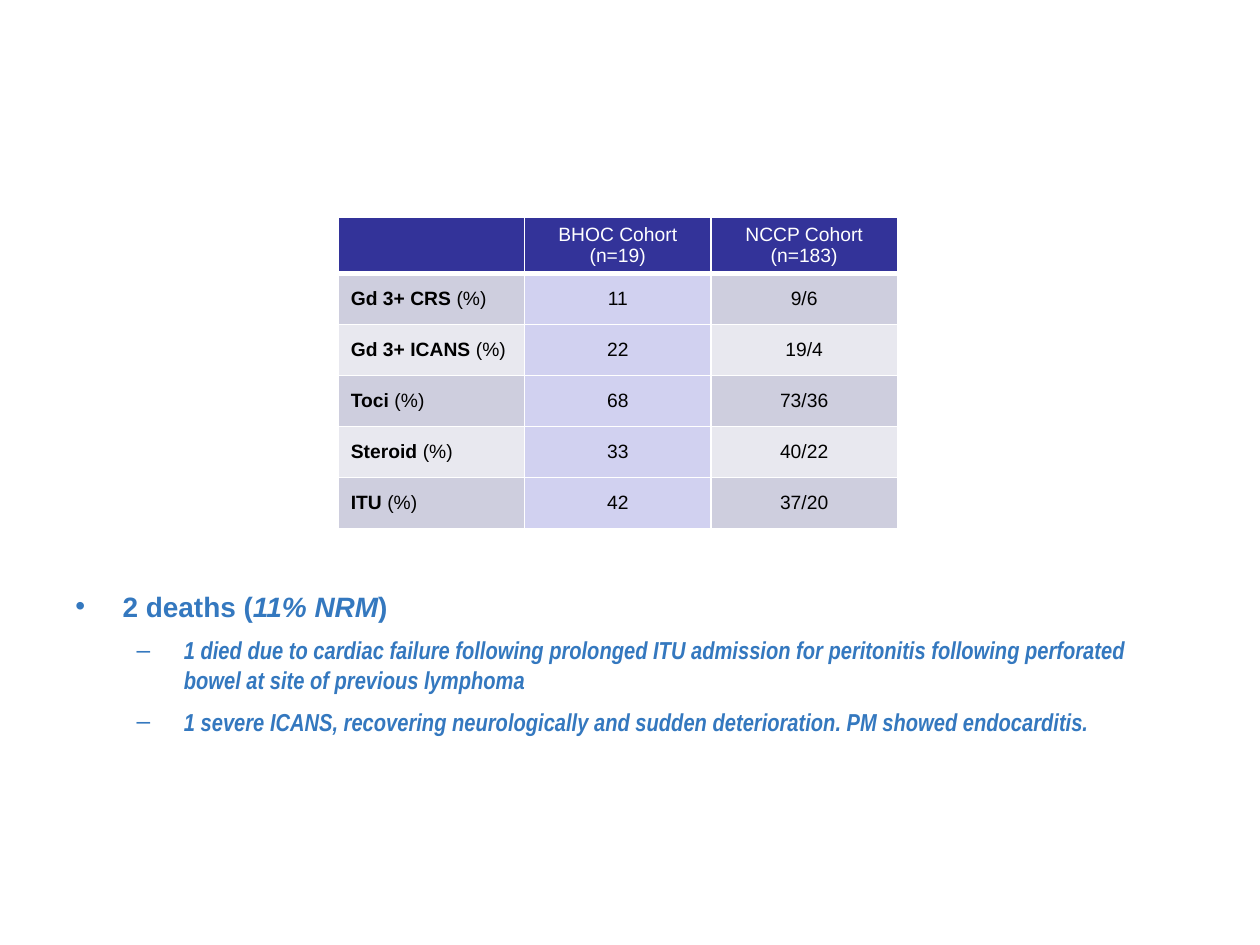
import lxml.etree
import pptx
import pptx.dml.color
import pptx.enum.text
import pptx.oxml.ns
import pptx.util

Pt = pptx.util.Pt
RGBColor = pptx.dml.color.RGBColor
qn = pptx.oxml.ns.qn
ALIGN = pptx.enum.text.PP_ALIGN

WHITE = RGBColor(0xFF, 0xFF, 0xFF)
BLACK = RGBColor(0x00, 0x00, 0x00)
NAVY = RGBColor(0x33, 0x33, 0x99)
DARK_BAND = RGBColor(0xCE, 0xCE, 0xDE)
LIGHT_BAND = RGBColor(0xE8, 0xE8, 0xEF)
LILAC = RGBColor(0xD1, 0xD1, 0xF0)
BLUE = RGBColor(0x34, 0x78, 0xBF)

HEADINGS = ["", "BHOC Cohort (n=19)", "NCCP Cohort (n=183)"]
OUTCOMES = [
    ("Gd 3+ CRS", "11", "9/6"),
    ("Gd 3+ ICANS", "22", "19/4"),
    ("Toci", "68", "73/36"),
    ("Steroid", "33", "40/22"),
    ("ITU", "42", "37/20"),
]
DEATHS = [
    "1 died due to cardiac failure following prolonged ITU admission for peritonitis "
    "following perforated bowel at site of previous lymphoma",
    "1 severe ICANS, recovering neurologically and sudden deterioration. "
    "PM showed endocarditis.",
]


def add_text(para, text, size=11, font="Arial", color=BLACK, bold=False, italic=False):
    """Append one formatted span to a paragraph."""
    span = para.add_run()
    span.text = text
    span.font.size = Pt(size)
    span.font.name = font
    span.font.color.rgb = color
    span.font.bold = bold
    span.font.italic = italic


def style_cell(cell, fill, bottom=1):
    """Give a cell white borders, a solid fill and middle anchoring."""
    properties = cell._tc.get_or_add_tcPr()
    for side, width in (("L", 1), ("R", 1), ("T", 1), ("B", bottom)):
        line = lxml.etree.SubElement(properties, qn(f"a:ln{side}"), w=str(Pt(width)))
        solid = lxml.etree.SubElement(line, qn("a:solidFill"))
        lxml.etree.SubElement(solid, qn("a:srgbClr"), val=str(WHITE))
    cell.fill.solid()
    cell.fill.fore_color.rgb = fill
    cell.vertical_anchor = pptx.enum.text.MSO_ANCHOR.MIDDLE


def add_outcome_table(page, left, top, width, height):
    """Place the toxicity table comparing the two cohorts."""
    row_count, column_count = len(OUTCOMES) + 1, len(HEADINGS)
    table = page.shapes.add_table(
        row_count, column_count, Pt(left), Pt(top), Pt(width), Pt(height)
    ).table
    for column in table.columns:
        column.width = Pt(width / column_count)
    for row in table.rows:
        row.height = Pt(height / row_count)

    for index, heading in enumerate(HEADINGS):
        cell = table.cell(0, index)
        style_cell(cell, NAVY, bottom=3)
        if heading:
            para = cell.text_frame.paragraphs[0]
            para.alignment = ALIGN.CENTER
            add_text(para, heading, color=WHITE)

    for row_index, (label, *values) in enumerate(OUTCOMES, start=1):
        band = DARK_BAND if row_index % 2 else LIGHT_BAND
        label_cell = table.cell(row_index, 0)
        style_cell(label_cell, band)
        para = label_cell.text_frame.paragraphs[0]
        add_text(para, label, bold=True)
        add_text(para, " (%)")
        for column_index, (value, fill) in enumerate(zip(values, (LILAC, band)), start=1):
            cell = table.cell(row_index, column_index)
            style_cell(cell, fill)
            para = cell.text_frame.paragraphs[0]
            para.alignment = ALIGN.CENTER
            add_text(para, value)


def set_bullet(para, symbol, margin, level=0):
    """Give a paragraph a hanging bullet."""
    para.level = level
    properties = para._p.get_or_add_pPr()
    properties.set("marL", str(Pt(margin)))
    properties.set("indent", str(Pt(-27)))
    lxml.etree.SubElement(properties, qn("a:buFont"), typeface="Arial")
    lxml.etree.SubElement(properties, qn("a:buChar"), char=symbol)


def add_deaths(page, left, top, width, height):
    """Place the bulleted summary of deaths."""
    box = page.shapes.add_textbox(Pt(left), Pt(top), Pt(width), Pt(height))
    frame = box.text_frame
    frame.word_wrap = True
    para = frame.paragraphs[0]
    set_bullet(para, "•", 27)
    for text, italic in (("2 deaths (", False), ("11% NRM", True), (")", False)):
        add_text(para, text, size=16, color=BLUE, bold=True, italic=italic)
    for death in DEATHS:
        para = frame.add_paragraph()
        set_bullet(para, "–", 62, level=1)
        para.space_before = Pt(7)
        add_text(para, death, size=14, font="Arial Narrow", color=BLUE, bold=True, italic=True)


def main():
    """Build and save the deck."""
    deck = pptx.Presentation()
    deck.slide_width, deck.slide_height = Pt(720), Pt(540)
    page = deck.slides.add_slide(deck.slide_layouts[6])
    add_outcome_table(page, 193.3, 124.4, 319.5, 175.2)
    add_deaths(page, 36, 333.4, 648, 147)
    deck.save("out.pptx")


if __name__ == "__main__":
    main()
